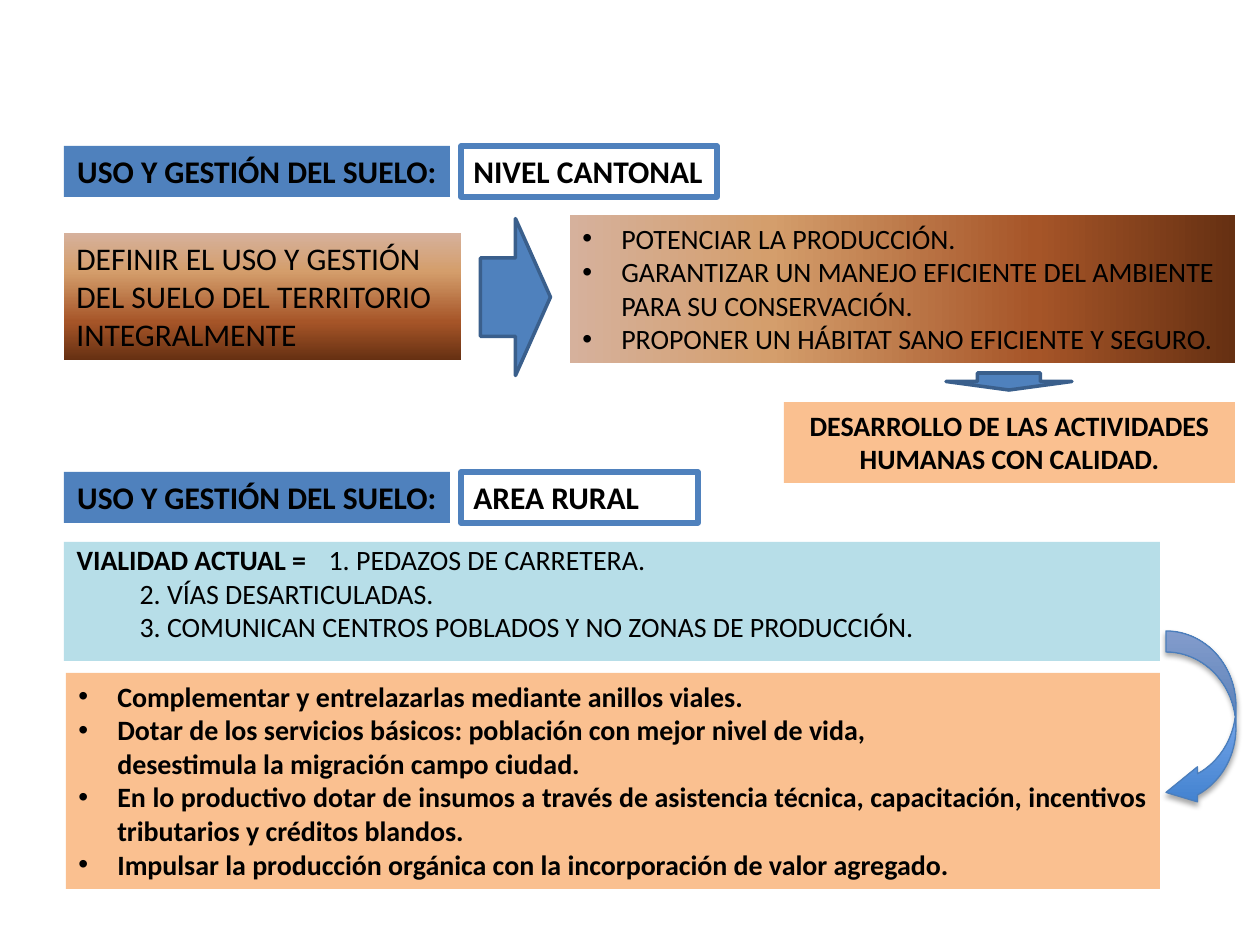
from lxml.etree import SubElement
from pptx import Presentation
from pptx.dml.color import RGBColor
from pptx.enum.shapes import MSO_SHAPE as Shape
from pptx.enum.text import MSO_ANCHOR as Anchor, MSO_AUTO_SIZE as AutoSize, PP_ALIGN as Align
from pptx.oxml.ns import qn
from pptx.util import Pt

EMU_PER_PX = 914400 / 126
COLORS = {
    "text": "000000", "blue": "4F81BD", "arrow_edge": "3A5F8C", "curve_edge": "4B7EBC",
    "peach": "FAC090", "sky": "B7DEE8", "shadow": "000000",
}
WOOD = [(0, "D6B19C"), (30, "D49E6C"), (70, "A65528"), (100, "663012")]
BLUE_FADE = [(0, "3F80CE"), (100, "A4C4FF")]
BULLET_INDENT = 39
ROAD_TAB = 253


def px(value):
    return round(value * EMU_PER_PX)


def rgb(name):
    return RGBColor.from_string(COLORS[name])


class SlideBuilder:
    font = "Calibri"

    def __init__(self, deck, layout):
        self.page = deck.slides.add_slide(layout)

    def paint(self, shape, fill=None, line=None, width=2):
        if fill:
            shape.fill.solid()
            shape.fill.fore_color.rgb = rgb(fill)
        if line:
            shape.line.color.rgb = rgb(line)
            shape.line.width = Pt(width)

    def gradient(self, shape, stops, angle):
        """Fill with (percent, hex) stops; the angle runs clockwise."""
        shape.fill.gradient()
        shape.fill.gradient_angle = (360 - angle) % 360
        stop_list = shape._element.spPr.find(".//" + qn("a:gsLst"))
        for stop in list(stop_list):
            stop_list.remove(stop)
        for percent, color in stops:
            stop = SubElement(stop_list, qn("a:gs"), pos=str(percent * 1000))
            SubElement(stop, qn("a:srgbClr"), val=color)

    def shadow(self, shape, blur, distance, opacity):
        """Cast a soft shadow straight down."""
        shape.shadow.inherit = False
        effects = shape._element.spPr.find(qn("a:effectLst"))
        outer = SubElement(effects, qn("a:outerShdw"), blurRad=str(Pt(blur)),
                           dist=str(Pt(distance)), dir="5400000", rotWithShape="0")
        color = SubElement(outer, qn("a:srgbClr"), val=COLORS["shadow"])
        SubElement(color, qn("a:alpha"), val=str(opacity * 1000))

    def span(self, para, text, size, bold):
        span = para.add_run()
        span.text = text
        span.font.name = self.font
        span.font.size = Pt(size)
        span.font.bold = bold
        span.font.color.rgb = rgb("text")

    def box(self, area, lines, size=16, bold=False, align=Align.LEFT, **style):
        box = self.page.shapes.add_textbox(*map(px, area))
        self.paint(box, **style)
        frame = box.text_frame
        frame.word_wrap = True
        frame.auto_size = AutoSize.SHAPE_TO_FIT_TEXT
        for index, line in enumerate(lines):
            para = frame.paragraphs[0] if index == 0 else frame.add_paragraph()
            para.alignment = align
            self.span(para, line, size, bold)
        return box

    def bullets(self, box, plain=()):
        """Hang every paragraph on a bullet; plain ones keep only the indent."""
        for index, para in enumerate(box.text_frame.paragraphs):
            props = para._p.get_or_add_pPr()
            props.set("marL", str(px(BULLET_INDENT)))
            if index not in plain:
                props.set("indent", str(-px(BULLET_INDENT)))
                SubElement(props, qn("a:buFont"), typeface="Arial")
                SubElement(props, qn("a:buChar"), char="•")

    def heading(self, top, topic, topic_width):
        self.box((64, top, 386, 51), ["USO Y GESTIÓN DEL SUELO:"], 18, True,
                 Align.CENTER, fill="blue")
        self.box((461, top, topic_width, 51), [topic], 18, True, line="blue", width=3)

    def subtitle(self, area, rows, fill):
        """Fill the subtitle placeholder with rows of (text, bold) spans."""
        holder = self.page.placeholders[1]
        holder.left, holder.top, holder.width, holder.height = map(px, area)
        self.paint(holder, fill)
        frame = holder.text_frame
        frame.auto_size = AutoSize.NONE
        frame.vertical_anchor = Anchor.TOP
        for index, row in enumerate(rows):
            para = frame.paragraphs[0] if index == 0 else frame.add_paragraph()
            tabs = SubElement(para._p.get_or_add_pPr(), qn("a:tabLst"))
            SubElement(tabs, qn("a:tab"), pos=str(px(ROAD_TAB)), algn="l")
            para.alignment = Align.LEFT
            para.line_spacing = Pt(16)
            para.space_before = Pt(3.2 if index else 0)
            for text, bold in row:
                self.span(para, text, 16, bold)

    def arrow(self, kind, area, rotation=0, fill="blue", line="arrow_edge", width=2):
        arrow = self.page.shapes.add_shape(kind, *map(px, area))
        arrow.shadow.inherit = False
        arrow.rotation = rotation
        self.paint(arrow, fill, line, width)
        return arrow


def main():
    deck = Presentation()
    deck.slide_width, deck.slide_height = px(1260), px(945)
    slide = SlideBuilder(deck, deck.slide_layouts[0])
    title = slide.page.shapes.title._element
    title.getparent().remove(title)

    slide.subtitle((64, 542, 1096, 119), [
        [("VIALIDAD ACTUAL = ", True), ("\t1. PEDAZOS DE CARRETERA.", False)],
        [("\t2. VÍAS DESARTICULADAS.", False)],
        [("\t3. COMUNICAN CENTROS POBLADOS Y NO ZONAS DE PRODUCCIÓN.", False)],
    ], "sky")

    slide.heading(146, "NIVEL CANTONAL", 256)
    slide.heading(472, "AREA RURAL", 237)

    purpose = slide.box((64, 233, 397, 127), [
        "DEFINIR EL USO Y GESTIÓN DEL SUELO DEL TERRITORIO INTEGRALMENTE"], 18)
    slide.gradient(purpose, WOOD, 90)

    goals = slide.box((570, 215, 665, 148), [
        "POTENCIAR LA PRODUCCIÓN.",
        "GARANTIZAR UN MANEJO EFICIENTE DEL AMBIENTE PARA SU CONSERVACIÓN.",
        "PROPONER UN HÁBITAT SANO EFICIENTE Y SEGURO.",
    ])
    slide.gradient(goals, WOOD, 0)
    slide.bullets(goals)

    slide.box((784, 402, 451, 81), ["DESARROLLO DE LAS ACTIVIDADES HUMANAS CON CALIDAD."],
              bold=True, align=Align.CENTER, fill="peach")

    actions = slide.box((66, 673, 1094, 216), [
        "Complementar y entrelazarlas mediante anillos viales.",
        "Dotar de los servicios básicos: población con mejor nivel de vida,",
        "desestimula la migración campo ciudad.",
        "En lo productivo dotar de insumos a través de asistencia técnica, "
        "capacitación, incentivos tributarios y créditos blandos.",
        "Impulsar la producción orgánica con la incorporación de valor agregado.",
    ], bold=True, align=Align.JUSTIFY, fill="peach")
    slide.bullets(actions, plain=(2,))

    slide.arrow(Shape.DOWN_ARROW, (946, 373, 126, 17))
    slide.arrow(Shape.DOWN_ARROW, (437, 262, 157, 70), rotation=270)
    curve = slide.arrow(Shape.CURVED_LEFT_ARROW, (1166, 631, 70, 179),
                        fill=None, line="curve_edge", width=0.75)
    for index, value in enumerate((0.3, 0.5, 0.45)):
        curve.adjustments[index] = value
    slide.gradient(curve, BLUE_FADE, 270)
    slide.shadow(curve, blur=3.1, distance=1.8, opacity=35)

    deck.save("out.pptx")


if __name__ == "__main__":
    main()
